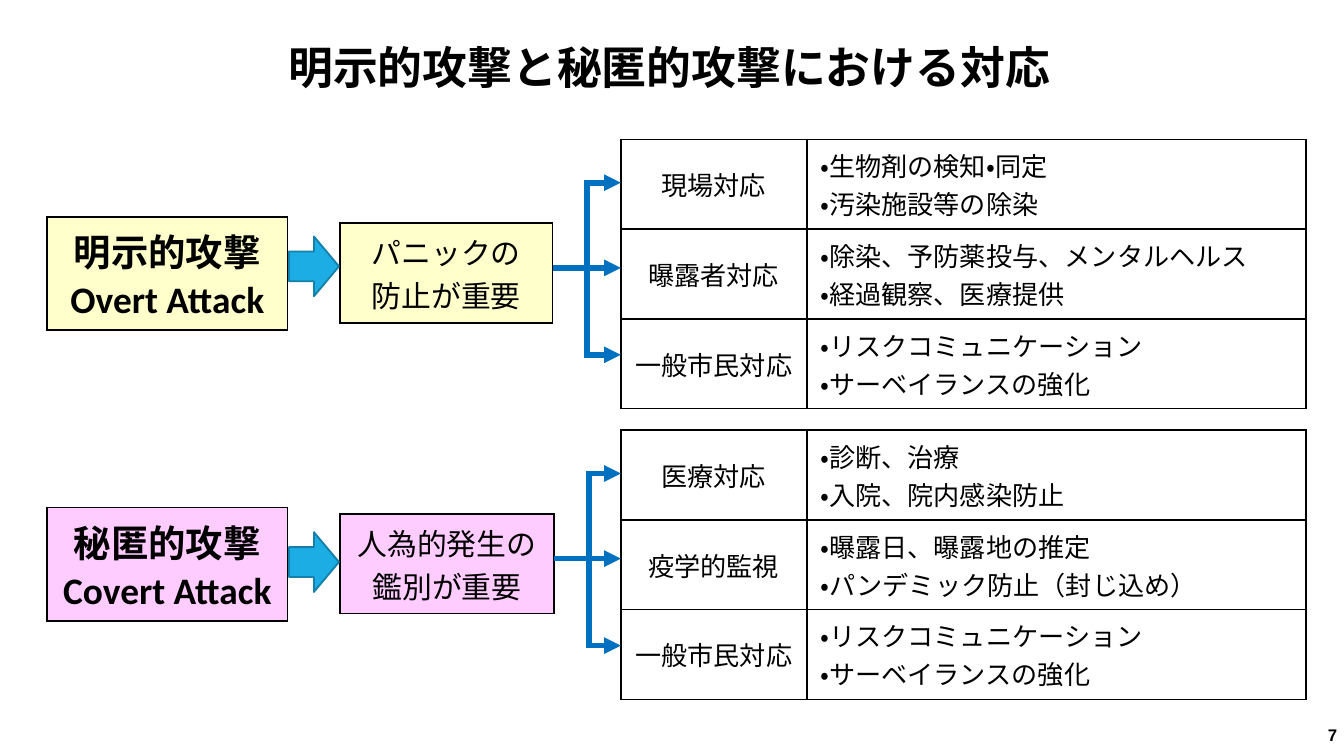
from dataclasses import dataclass

from lxml.etree import SubElement
from pptx import Presentation
from pptx.dml.color import RGBColor
from pptx.enum.lang import MSO_LANGUAGE_ID as Language
from pptx.enum.shapes import MSO_CONNECTOR as Connector, MSO_SHAPE as Shape
from pptx.enum.text import MSO_ANCHOR as Anchor, PP_ALIGN as Align
from pptx.oxml.ns import qn
from pptx.util import Pt

BLACK = RGBColor(0x00, 0x00, 0x00)
WHITE = RGBColor(0xFF, 0xFF, 0xFF)
YELLOW = RGBColor(0xFF, 0xFF, 0xCC)
PINK = RGBColor(0xFF, 0xCC, 0xFF)
ARROW_FILL = RGBColor(0x1C, 0xAD, 0xE4)
ARROW_LINE = RGBColor(0x15, 0x80, 0xA9)
BRANCH_BLUE = RGBColor(0x00, 0x70, 0xC0)

TABLE_LEFT = 332.6
ROW_HEIGHT = 45.9


@dataclass
class Response:
    target: str
    measures: list[str]


@dataclass
class Attack:
    top: float  # top of the response table
    arrow_top: float
    trunk_x: float
    color: RGBColor
    names: list[str]
    priority: list[str]
    priority_width: float
    responses: list[Response]


PUBLIC = Response("一般市民対応", ["・リスクコミュニケーション", "・サーベイランスの強化"])
ATTACKS = [
    Attack(74.7, 126.7, 314.6, YELLOW, ["明示的攻撃", "Overt Attack"],
           ["パニックの", "防止が重要"], 113.8, [
               Response("現場対応", ["・生物剤の検知・同定", "・汚染施設等の除染"]),
               Response("曝露者対応", ["・除染、予防薬投与、メンタルヘルス", "・経過観察、医療提供"]),
               PUBLIC]),
    Attack(230.5, 285.1, 315.6, PINK, ["秘匿的攻撃", "Covert Attack"],
           ["人為的発生の", "鑑別が重要"], 114.6, [
               Response("医療対応", ["・診断、治療", "・入院、院内感染防止"]),
               Response("疫学的監視", ["・曝露日、曝露地の推定", "・パンデミック防止（封じ込め）"]),
               PUBLIC]),
]


def write(frame, lines: list[str], *, size: float, bold: bool = False,
          align=Align.CENTER, font: str = "Calibri", spacing: float | None = None) -> None:
    for index, line in enumerate(lines):
        para = frame.paragraphs[0] if index == 0 else frame.add_paragraph()
        para.alignment = align
        if spacing:
            para.line_spacing = spacing
        span = para.add_run()
        span.text = line
        span.font.name = font
        span.font.size = Pt(size)
        span.font.bold = bold
        span.font.color.rgb = BLACK
        span.font.language_id = Language.JAPANESE


def format_cell(cell, color: RGBColor) -> None:
    """Give the cell black borders, a fill and centred height."""
    cell.vertical_anchor = Anchor.MIDDLE
    properties = cell._tc.get_or_add_tcPr()
    for side in ("lnL", "lnR", "lnT", "lnB"):
        border = SubElement(properties, qn(f"a:{side}"), w=str(Pt(1)))
        fill = SubElement(border, qn("a:solidFill"))
        SubElement(fill, qn("a:srgbClr"), val=str(BLACK))
    cell.fill.solid()
    cell.fill.fore_color.rgb = color


def add_grid(page, left: float, top: float, widths: list[float], row_height: float,
             rows: int, color: RGBColor):
    table = page.shapes.add_table(rows, len(widths), Pt(left), Pt(top), Pt(sum(widths)),
                                  Pt(row_height * rows)).table
    table.first_row = table.horz_banding = False
    for column, width in zip(table.columns, widths):
        column.width = Pt(width)
    for row in table.rows:
        row.height = Pt(row_height)
    for cell in table.iter_cells():
        format_cell(cell, color)
    return table


def add_line(page, x1: float, y1: float, x2: float, y2: float, arrow: bool = False) -> None:
    line = page.shapes.add_connector(Connector.STRAIGHT, Pt(x1), Pt(y1), Pt(x2), Pt(y2))
    line.line.color.rgb = BRANCH_BLUE
    line.line.width = Pt(3)
    if arrow:
        SubElement(line.line._get_or_add_ln(), qn("a:tailEnd"), type="triangle")
    SubElement(line._element.spPr, qn("a:effectLst"))


def add_block_arrow(page, top: float) -> None:
    arrow = page.shapes.add_shape(Shape.RIGHT_ARROW, Pt(154.8), Pt(top), Pt(26.8), Pt(32))
    arrow.shadow.inherit = False
    arrow.fill.solid()
    arrow.fill.fore_color.rgb = ARROW_FILL
    arrow.line.color.rgb = ARROW_LINE
    arrow.line.width = Pt(1)


def add_branches(page, attack: Attack) -> None:
    """Fork from the priority box to the three rows of the response table."""
    upper, middle, lower = (attack.top + offset for offset in (23.2, 68.8, 115.4))
    add_line(page, 182.2 + attack.priority_width, middle, TABLE_LEFT, middle, arrow=True)
    add_line(page, attack.trunk_x, upper - 1.5, attack.trunk_x, lower + 1.5)
    for y in (upper, lower):
        add_line(page, attack.trunk_x, y, TABLE_LEFT, y, arrow=True)


def add_attack(page, attack: Attack) -> None:
    name = add_grid(page, 25.2, attack.top + 41.4, [128.9], 55.4, 1, attack.color)
    write(name.cell(0, 0).text_frame, attack.names, size=20, bold=True)
    priority = add_grid(page, 182.2, attack.top + 44.9, [attack.priority_width], 48.2, 1,
                        attack.color)
    write(priority.cell(0, 0).text_frame, attack.priority, size=16)
    table = add_grid(page, TABLE_LEFT, attack.top, [99.6, 267.6], ROW_HEIGHT,
                     len(attack.responses), WHITE)
    for row, response in enumerate(attack.responses):
        write(table.cell(row, 0).text_frame, [response.target], size=14)
        write(table.cell(row, 1).text_frame, response.measures, size=14, align=Align.LEFT)
    add_block_arrow(page, attack.arrow_top)
    add_branches(page, attack)


def main() -> None:
    deck = Presentation()
    deck.slide_width, deck.slide_height = Pt(720), Pt(405)
    page = deck.slides.add_slide(deck.slide_layouts[5])

    title = page.shapes.title
    title.left, title.top, title.width, title.height = Pt(48.2), Pt(18), Pt(620.6), Pt(38.9)
    title.text_frame.vertical_anchor = Anchor.MIDDLE
    write(title.text_frame, ["明示的攻撃と秘匿的攻撃における対応"], size=24, bold=True, spacing=0.9)

    for attack in ATTACKS:
        add_attack(page, attack)

    number = page.shapes.add_textbox(Pt(677.5), Pt(383.8), Pt(42.5), Pt(19.4)).text_frame
    number.word_wrap = True
    number.vertical_anchor = Anchor.MIDDLE
    number.margin_right = Pt(3.6)
    write(number, ["7"], size=9, bold=True, align=Align.RIGHT, font="Arial")

    deck.save("out.pptx")


if __name__ == "__main__":
    main()
